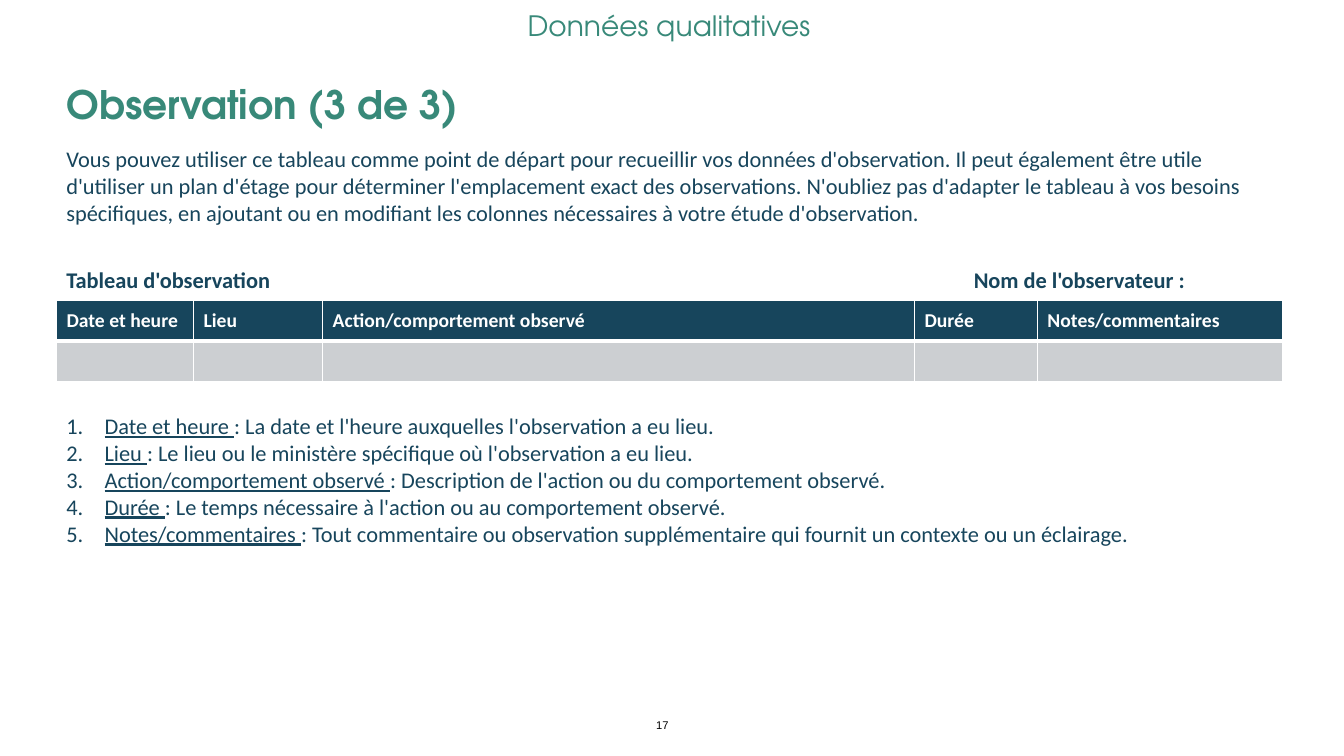
from lxml.etree import SubElement
from pptx import Presentation
from pptx.dml.color import RGBColor
from pptx.enum.text import MSO_ANCHOR, PP_ALIGN
from pptx.oxml.ns import qn
from pptx.util import Inches, Pt


def color(value):
    return RGBColor.from_string(value)


class SlideBuilder:
    """Hold the style and the current slide, and add each kind of element."""

    green, navy, grey, white, black = "388979", "17455C", "CCCFD2", "FFFFFF", "000000"
    heading_font, body_font, number_font = "TeX Gyre Adventor", "Calibri", "Arial"

    def __init__(self, deck):
        self.slide = deck.slides.add_slide(deck.slide_layouts[6])

    def set_font(self, para, size, fill, name, bold=False):
        para.font.size = Pt(size)
        para.font.name = name
        para.font.bold = bold
        para.font.color.rgb = color(fill)

    def frame(self, left, top, width, height, anchor=MSO_ANCHOR.TOP):
        box = self.slide.shapes.add_textbox(
            Inches(left), Inches(top), Inches(width), Inches(height))
        box.text_frame.word_wrap = True
        box.text_frame.vertical_anchor = anchor
        return box.text_frame

    def text(self, place, words, size=16, fill=navy, name=body_font, bold=False,
             align=PP_ALIGN.LEFT, anchor=MSO_ANCHOR.TOP, spacing=None, tab=None):
        para = self.frame(*place, anchor).paragraphs[0]
        para.text = words
        para.alignment = align
        if spacing:
            para.line_spacing = spacing
        if tab:
            stops = SubElement(para._p.get_or_add_pPr(), qn("a:tabLst"))
            SubElement(stops, qn("a:tab"), pos=str(Inches(tab)), algn="l")
        self.set_font(para, size, fill, name, bold)

    def numbered_list(self, place, entries, indent=0.38):
        frame = self.frame(*place)
        for index, (term, meaning) in enumerate(entries):
            para = frame.add_paragraph() if index else frame.paragraphs[0]
            properties = para._p.get_or_add_pPr()
            properties.set("marL", str(Inches(indent)))
            properties.set("indent", str(-Inches(indent)))
            SubElement(properties, qn("a:buFont"), typeface="+mj-lt")
            SubElement(properties, qn("a:buAutoNum"), type="arabicPeriod")
            self.set_font(para, 16, self.navy, self.body_font)
            span = para.add_run()
            span.text = f"{term} "
            span.font.underline = True
            para.add_run().text = f": {meaning}"

    def border(self, cell, side, width):
        line = SubElement(cell._tc.get_or_add_tcPr(), qn(f"a:ln{side}"), w=str(Pt(width)))
        fill = SubElement(line, qn("a:solidFill"))
        SubElement(fill, qn("a:srgbClr"), val=self.white)

    def table(self, left, top, headers, widths, row_height=0.405):
        table = self.slide.shapes.add_table(
            2, len(headers), Inches(left), Inches(top),
            Inches(sum(widths)), Inches(2 * row_height)).table
        for column, width in zip(table.columns, widths):
            column.width = Inches(width)
        for row_index, (fill, labels) in enumerate(
                [(self.navy, headers), (self.grey, [""] * len(headers))]):
            table.rows[row_index].height = Inches(row_height)
            for cell, label in zip(table.rows[row_index].cells, labels):
                cell.text = label
                cell.vertical_anchor = MSO_ANCHOR.MIDDLE
                self.set_font(cell.text_frame.paragraphs[0], 14, self.white,
                              self.body_font, bold=True)
                for side in "LRTB":
                    header_edge = side == ("T" if row_index else "B")
                    self.border(cell, side, 3 if header_edge else 1)
                cell.fill.solid()
                cell.fill.fore_color.rgb = color(fill)


def main():
    deck = Presentation()
    deck.slide_width, deck.slide_height = Inches(13.33), Inches(7.5)
    page = SlideBuilder(deck)
    left, width = 0.56, 12.04

    page.text((6.37, 7.06, 0.4, 0.27), "17", 8, page.black, page.number_font,
              align=PP_ALIGN.CENTER, anchor=MSO_ANCHOR.MIDDLE)
    page.text((left, 0.6, width, 0.91), "Observation (3 de 3)", 28, page.green,
              page.heading_font, bold=True, anchor=MSO_ANCHOR.MIDDLE, spacing=0.9)
    page.text((5.09, 0.04, 3.09, 0.44), "Données qualitatives", 20, page.green,
              page.heading_font, align=PP_ALIGN.CENTER)
    page.text((left, 1.39, width, 0.91),
              "Vous pouvez utiliser ce tableau comme point de départ pour recueillir vos "
              "données d'observation. Il peut également être utile d'utiliser un plan "
              "d'étage pour déterminer l'emplacement exact des observations. N'oubliez pas "
              "d'adapter le tableau à vos besoins spécifiques, en ajoutant ou en modifiant "
              "les colonnes nécessaires à votre étude d'observation.")
    page.text((left, 2.59, 12.16, 0.37),
              "Tableau d'observation\tNom de l'observateur :", bold=True, tab=9)

    entries = [
        ("Date et heure", "La date et l'heure auxquelles l'observation a eu lieu."),
        ("Lieu", "Le lieu ou le ministère spécifique où l'observation a eu lieu."),
        ("Action/comportement observé",
         "Description de l'action ou du comportement observé."),
        ("Durée", "Le temps nécessaire à l'action ou au comportement observé."),
        ("Notes/commentaires", "Tout commentaire ou observation supplémentaire qui "
                               "fournit un contexte ou un éclairage."),
    ]
    page.table(left, 2.98, [term for term, _ in entries], [1.36, 1.28, 5.87, 1.22, 2.43])
    page.numbered_list((left, 4.04, width, 1.72), entries)
    deck.save("out.pptx")


if __name__ == "__main__":
    main()
